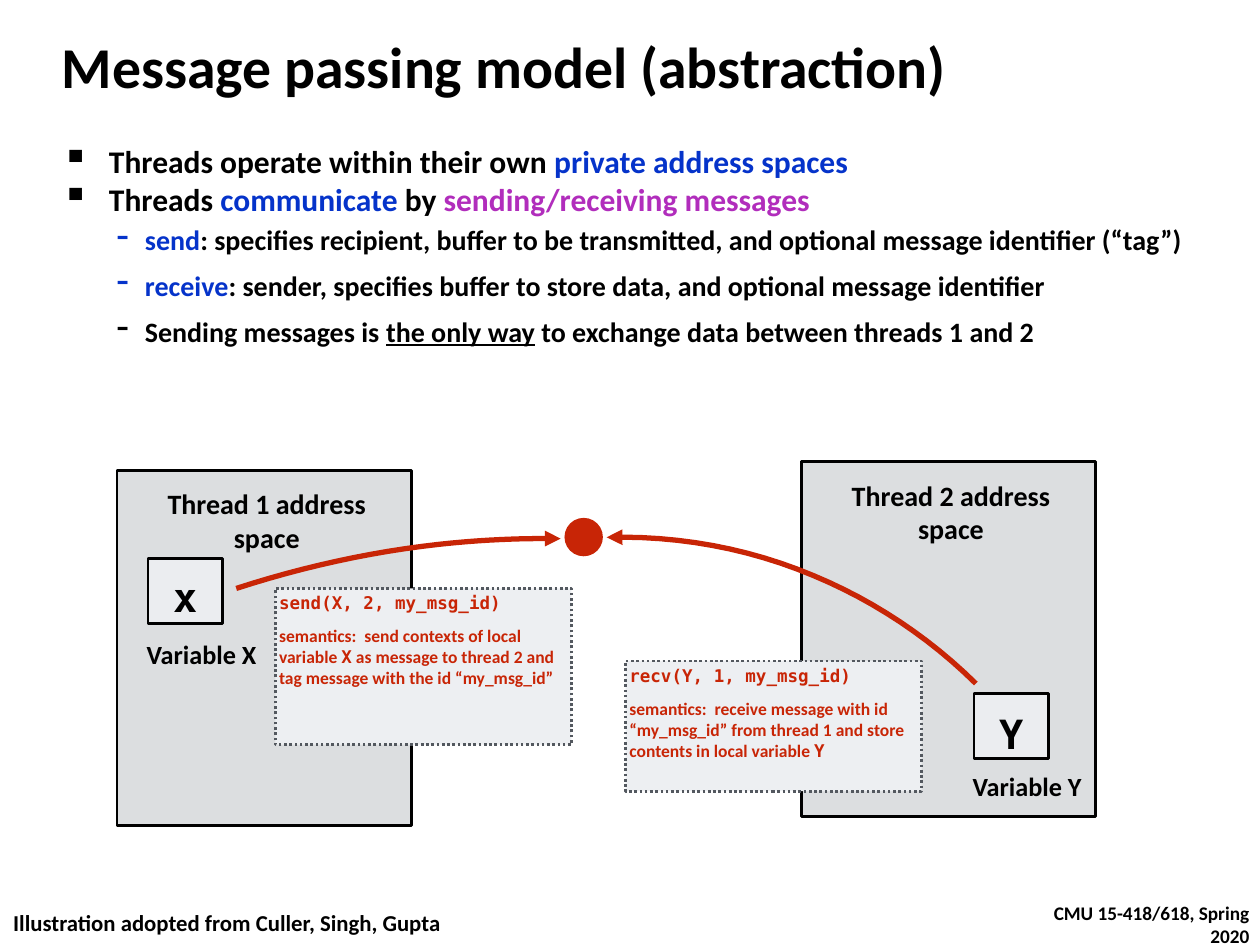
import pptx
import pptx.util
import pptx.dml.color
import pptx.enum.dml
import pptx.enum.shapes
import pptx.enum.text
import pptx.oxml.ns
from lxml import etree

SHAPES = pptx.enum.shapes.MSO_SHAPE
ALIGN = pptx.enum.text.PP_ALIGN
ANCHOR = pptx.enum.text.MSO_ANCHOR

COLORS = {"black": "000000", "blue": "0533CA", "purple": "B12DBC", "red": "C82506",
          "space": "DCDEE0", "variable": "EBEDF0", "note": "EDEFF2", "border": "53585F"}
BODY_FONT, CODE_FONT = "Calibri", "DejaVu Sans Mono"

# Grid of 20 columns and 15 rows; every box is left, top, width, height.
COLUMNS, ROWS = 20, 15
TITLE = ("Message passing model (abstraction)", (0.92, 0.43, 17.67, 1.22))
CREDIT = ("Illustration adopted from Culler, Singh, Gupta", (0.15, 14.36, 8.4, 0.64))
COURSE = ("CMU 15-418/618, Spring 2020", (16.51, 14.25, 3.38, 0.85))

# Each bullet: level, space before, runs of (text, color, underlined).
BULLETS_BOX = (0.92, 2.19, 18.28, 4.74)
BULLETS = [
    (0, 14, [("Threads operate within their own ", "black", False),
             ("private address spaces", "blue", False)]),
    (0, 0, [("Threads ", "black", False), ("communicate", "blue", False),
            (" by ", "black", False), ("sending/receiving messages", "purple", False)]),
    (1, 6, [("send", "blue", False),
            (": specifies recipient, buffer to be transmitted, and optional message "
             "identifier (“tag”)", "black", False)]),
    (1, 14, [("receive", "blue", False),
             (": sender, specifies buffer to store data, and optional message identifier",
              "black", False)]),
    (1, 14, [("Sending messages is ", "black", False), ("the only way", "black", True),
             (" to exchange data between threads 1 and 2", "black", False)]),
]
# Each level: size, bullet character, bullet percent, left margin, indent.
LEVELS = [(36, "▪", 120, 0.75, -0.75), (32, "-", 130, 1.32, -0.45)]

SPACE_SIZE = (4.67, 5.63)
VARIABLE_SIZE = (1.18, 1.03)
THREADS = [
    {"heading": "Thread 1 address space", "corner": (1.86, 7.47),
     "letter": "x", "variable": (2.35, 8.87), "letter_drop": 0.15,
     "label": "Variable X", "label_box": (2.05, 10.07, 2.3, 0.61),
     "note_box": (4.37, 9.34, 4.7, 2.48), "call": "send(X, 2, my_msg_id)",
     "semantics": [("semantics:  send contexts of local variable ", BODY_FONT),
                   ("X", CODE_FONT),
                   (" as message to thread 2 and tag message with the id “my_msg_id”",
                    BODY_FONT)],
     "arrow": [(3.75, 9.34), (4.8, 9), (5.88, 8.76), (6.97, 8.64),
               (7.61, 8.57), (8.25, 8.54), (8.9, 8.55)]},
    {"heading": "Thread 2 address space", "corner": (12.72, 7.33),
     "letter": "Y", "variable": (15.46, 11.01), "letter_drop": 0.18,
     "label": "Variable Y", "label_box": (15.18, 12.16, 2.25, 0.49),
     "note_box": (9.93, 10.49, 4.7, 2.07), "call": "recv(Y, 1, my_msg_id)",
     "semantics": [("semantics:  receive message with id “my_msg_id” from thread 1 "
                    "and store contents in local variable ", BODY_FONT),
                   ("Y", CODE_FONT)],
     "arrow": [(15.49, 10.85), (14.75, 10.12), (13.88, 9.54), (12.92, 9.14),
               (11.88, 8.7), (10.76, 8.5), (9.63, 8.53)]},
]
MESSAGE_DOT = (8.96, 8.22, 0.61, 0.61)
CURVE_STEPS = 12

presentation = pptx.Presentation()
presentation.slide_width = pptx.util.Inches(20)
presentation.slide_height = pptx.util.Inches(15)
slide = presentation.slides.add_slide(presentation.slide_layouts[6])
COLUMN = presentation.slide_width / COLUMNS
ROW = presentation.slide_height / ROWS


def color(name):
    return pptx.dml.color.RGBColor.from_string(COLORS[name])


def place(box):
    left, top, width, height = box
    return (round(left * COLUMN), round(top * ROW),
            round(width * COLUMN), round(height * ROW))


def set_font(font, size, name="black", face=BODY_FONT):
    font.size, font.bold, font.name = pptx.util.Pt(size), True, face
    font.color.rgb = color(name)


def prepare_frame(shape):
    frame = shape.text_frame
    frame.word_wrap = True
    frame.margin_left = frame.margin_right = pptx.util.Inches(0.06)
    frame.margin_top = frame.margin_bottom = pptx.util.Inches(0.06)
    frame.vertical_anchor = ANCHOR.TOP
    return frame


def add_text(text, box, size, align=ALIGN.LEFT, face=BODY_FONT):
    frame = prepare_frame(slide.shapes.add_textbox(*place(box)))
    paragraph = frame.paragraphs[0]
    paragraph.text, paragraph.alignment = text, align
    set_font(paragraph.font, size, face=face)
    return frame


def add_box(kind, box, fill, border=None):
    shape = slide.shapes.add_shape(kind, *place(box))
    shape.shadow.inherit = False
    shape.fill.solid()
    shape.fill.fore_color.rgb = color(fill)
    if border:
        shape.line.color.rgb = color(border)
        shape.line.width = pptx.util.Pt(3)
    else:
        shape.line.fill.background()
    return shape


def add_bullets():
    frame = prepare_frame(slide.shapes.add_textbox(*place(BULLETS_BOX)))
    for index, (level, space, runs) in enumerate(BULLETS):
        paragraph = frame.add_paragraph() if index else frame.paragraphs[0]
        size, character, percent, margin, indent = LEVELS[level]
        paragraph.level = level
        paragraph.space_before = pptx.util.Pt(space)
        for text, name, underlined in runs:
            run = paragraph.add_run()
            run.text = text
            set_font(run.font, size, name)
            run.font.underline = underlined
        properties = paragraph._p.get_or_add_pPr()
        properties.set("marL", str(pptx.util.Inches(margin)))
        properties.set("indent", str(pptx.util.Inches(indent)))
        for tag, key, value in (("a:buSzPct", "val", str(percent * 1000)),
                                ("a:buChar", "char", character)):
            etree.SubElement(properties, pptx.oxml.ns.qn(tag)).set(key, value)


def curve_points(knots):
    """Sample a chain of cubic Bezier curves that share their end points."""
    points = [knots[0]]
    for first in range(0, len(knots) - 1, 3):
        controls = knots[first:first + 4]
        for step in range(1, CURVE_STEPS + 1):
            t = step / CURVE_STEPS
            weights = ((1 - t) ** 3, 3 * t * (1 - t) ** 2, 3 * t * t * (1 - t), t ** 3)
            points.append(tuple(sum(w * control[axis] for w, control in zip(weights, controls))
                                for axis in (0, 1)))
    return [(round(x * COLUMN), round(y * ROW)) for x, y in points]


def add_arrow(knots):
    start, *rest = curve_points(knots)
    builder = slide.shapes.build_freeform(*start)
    builder.add_line_segments(rest, close=False)
    arrow = builder.convert_to_shape()
    arrow.shadow.inherit = False
    arrow.fill.background()
    arrow.line.color.rgb = color("red")
    arrow.line.width = pptx.util.Pt(6)
    line = arrow.element.spPr.find(pptx.oxml.ns.qn("a:ln"))
    etree.SubElement(line, pptx.oxml.ns.qn("a:tailEnd")).set("type", "triangle")


def add_address_space(thread):
    left, top = thread["corner"]
    add_box(SHAPES.RECTANGLE, (left, top, *SPACE_SIZE), "space", "black")
    add_text(thread["heading"], (left + 0.32, top + 0.2, 4.11, 1.07), 32, ALIGN.CENTER)
    add_text(thread["label"], thread["label_box"], 30, ALIGN.CENTER)
    left, top = thread["variable"]
    add_box(SHAPES.RECTANGLE, (left, top, *VARIABLE_SIZE), "variable", "black")
    add_text(thread["letter"], (left + 0.17, top + thread["letter_drop"], 0.84, 0.78),
             46, ALIGN.CENTER, CODE_FONT)


def add_note(thread):
    note = add_box(SHAPES.RECTANGLE, thread["note_box"], "note", "border")
    note.line.dash_style = pptx.enum.dml.MSO_LINE.ROUND_DOT
    frame = prepare_frame(note)
    for index, runs in enumerate(([(thread["call"], CODE_FONT)], thread["semantics"])):
        paragraph = frame.add_paragraph() if index else frame.paragraphs[0]
        paragraph.alignment = ALIGN.LEFT
        paragraph.space_before = pptx.util.Pt(14)
        for text, face in runs:
            run = paragraph.add_run()
            run.text = text
            set_font(run.font, 20, "red", face)


add_text(*TITLE, 66)
add_bullets()
for thread in THREADS:
    add_address_space(thread)
for thread in THREADS:
    add_arrow(thread["arrow"])
add_box(SHAPES.OVAL, MESSAGE_DOT, "red")
for thread in THREADS:
    add_note(thread)
add_text(*CREDIT, 26)
add_text(*COURSE, 22, ALIGN.RIGHT).vertical_anchor = ANCHOR.MIDDLE

presentation.save("out.pptx")
